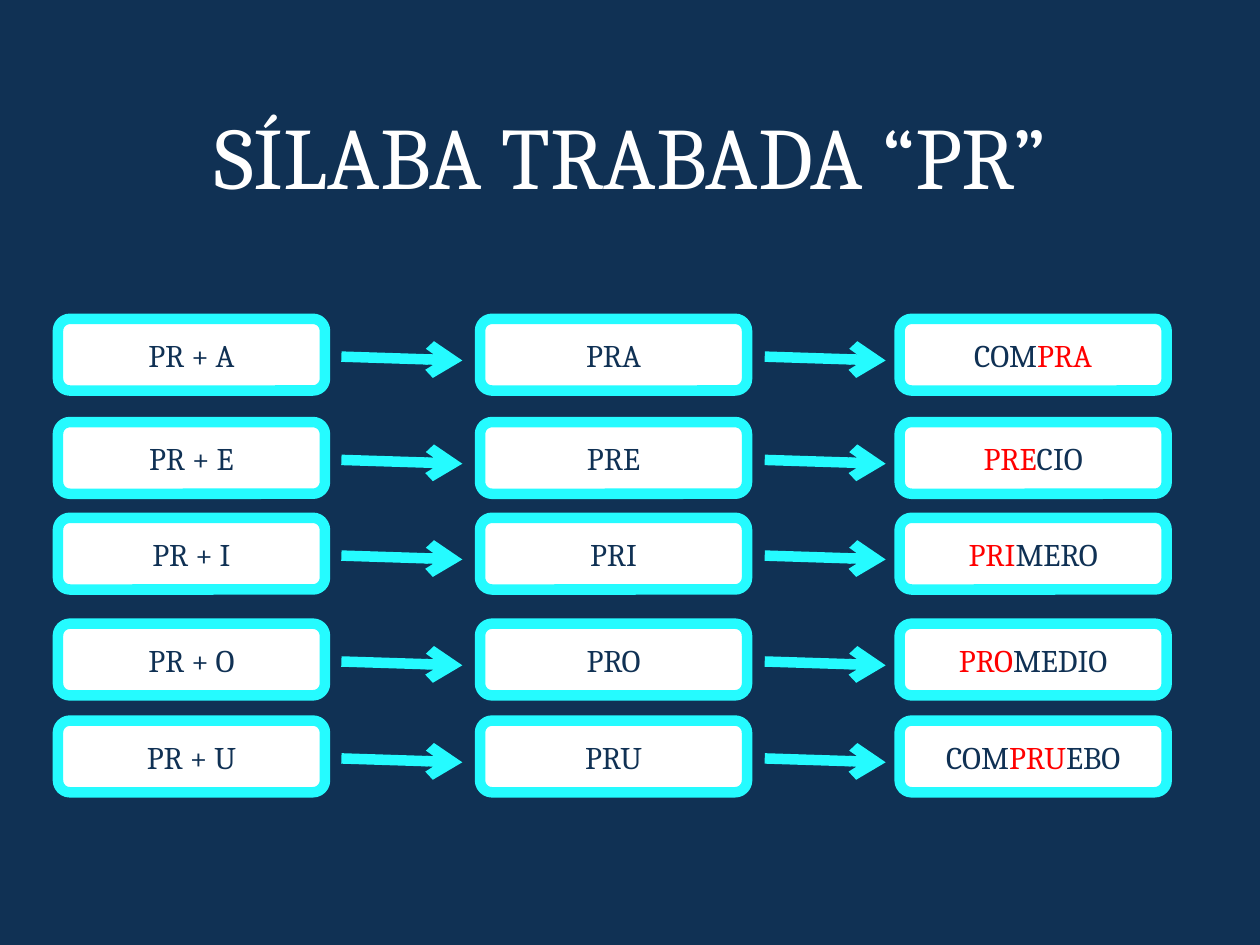
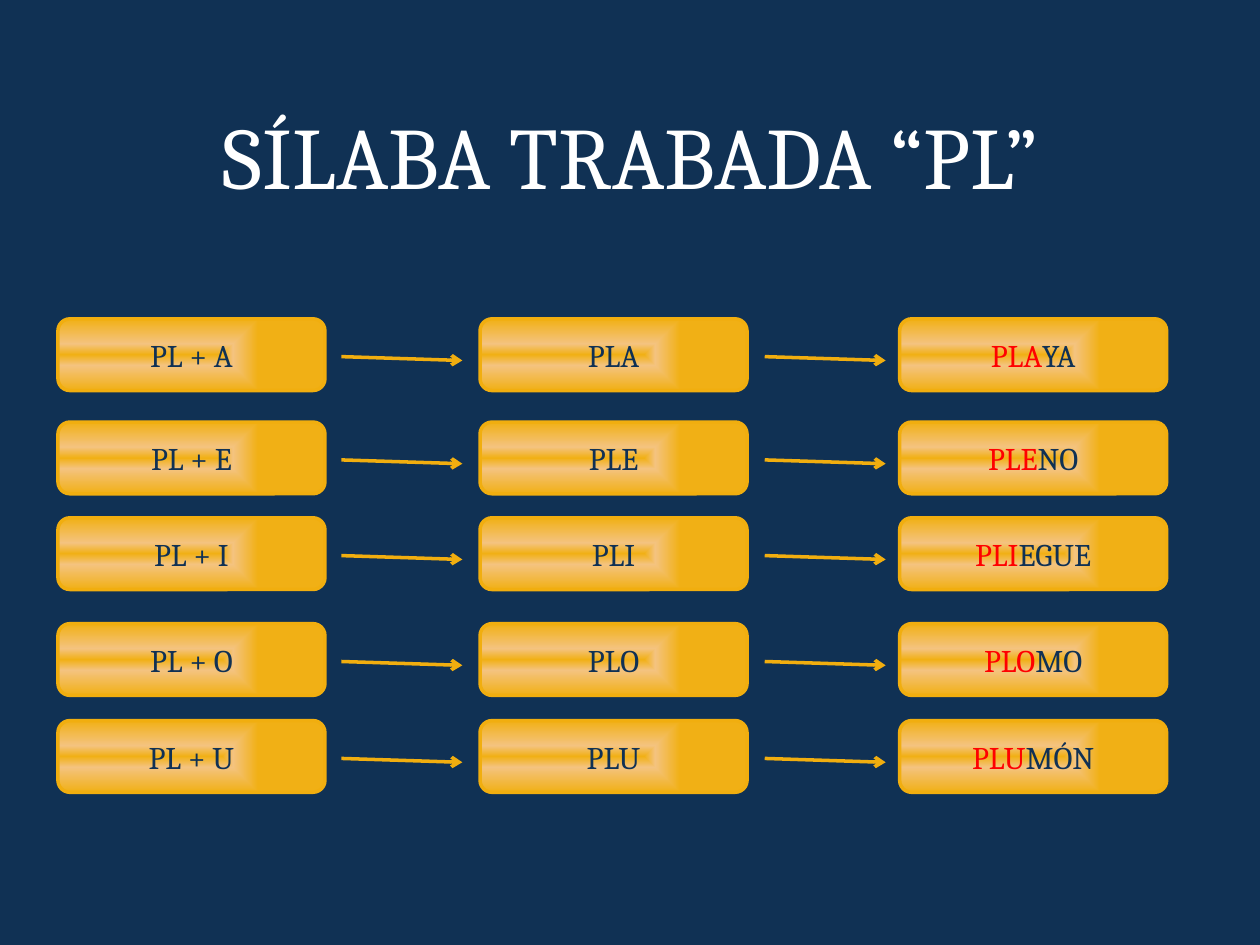
from dataclasses import dataclass

from lxml.etree import SubElement
from pptx import Presentation
from pptx.dml.color import RGBColor
from pptx.enum.shapes import MSO_CONNECTOR as Connector, MSO_SHAPE as Preset
from pptx.enum.text import MSO_ANCHOR as Anchor, PP_ALIGN as Align
from pptx.oxml.ns import qn
from pptx.util import Pt

FONT = "Cambria"
NAVY, WHITE, RED = "103154", "FFFFFF", "FF0000"

VOWELS = "AEIOU"
ROW_TOPS = (182.2, 241.2, 295.9, 356.4, 411.8)
COLUMN_LEFTS = (33.1, 274.3, 514.1)
BOX_WIDTH, BOX_HEIGHT = 152.6, 41
ARROW_LEFTS = (195.1, 437)
ARROW_LENGTH, ARROW_DROP = 69.1, 2.2
ARROW_OFFSET = 21.6


@dataclass(frozen=True)
class GradientStop:
    percent: int
    color: str


@dataclass(frozen=True)
class Lesson:
    consonants: str
    words: tuple[str, ...]
    accent: str
    line_width: float
    fill: str | tuple[GradientStop, ...]


GOLD_GLOW = (GradientStop(0, "F1B015"), GradientStop(30, "F4C37F"), GradientStop(100, "F1B015"))

LESSONS = (
    Lesson("PR", ("COMPRA", "PRECIO", "PRIMERO", "PROMEDIO", "COMPRUEBO"), "25FBFF", 6, WHITE),
    Lesson("PL", ("PLAYA", "PLENO", "PLIEGUE", "PLOMO", "PLUMÓN"), "F1AE0F", 2, GOLD_GLOW),
)


def rgb(color: str) -> RGBColor:
    return RGBColor.from_string(color)


def style_run(run, size: float, color: str) -> None:
    run.font.name = FONT
    run.font.size = Pt(size)
    run.font.color.rgb = rgb(color)


def style_line(line, lesson: Lesson) -> None:
    line.color.rgb = rgb(lesson.accent)
    line.width = Pt(lesson.line_width)


def fill_with_gradient(shape, stops: tuple[GradientStop, ...]) -> None:
    """Fill with a rectangular gradient centred a quarter of the way across."""
    gradient = SubElement(shape._element.spPr, qn("a:gradFill"), rotWithShape="1")
    stop_list = SubElement(gradient, qn("a:gsLst"))
    for stop in stops:
        entry = SubElement(stop_list, qn("a:gs"), pos=str(stop.percent * 1000))
        SubElement(entry, qn("a:srgbClr"), val=stop.color)
    shade = SubElement(gradient, qn("a:path"))
    shade.set("path", "rect")
    SubElement(shade, qn("a:fillToRect"), l="50000", r="100000")


def add_title(slide, title: str) -> None:
    frame = slide.shapes.add_textbox(Pt(39.6), Pt(7.2), Pt(641.5), Pt(114.5)).text_frame
    frame.word_wrap = True
    frame.vertical_anchor = Anchor.BOTTOM
    frame.text = title
    paragraph = frame.paragraphs[0]
    paragraph.alignment = Align.CENTER
    style_run(paragraph.runs[0], 50, WHITE)


def add_box(slide, lesson: Lesson, left: float, top: float, text: str, highlight: str = "") -> None:
    """Draw a rounded box whose highlighted part, if any, is red."""
    box = slide.shapes.add_shape(
        Preset.ROUNDED_RECTANGLE, Pt(left), Pt(top), Pt(BOX_WIDTH), Pt(BOX_HEIGHT))
    box.shadow.inherit = False
    if isinstance(lesson.fill, str):
        box.fill.solid()
        box.fill.fore_color.rgb = rgb(lesson.fill)
    else:
        fill_with_gradient(box, lesson.fill)
    style_line(box.line, lesson)

    frame = box.text_frame
    frame.word_wrap = True
    frame.vertical_anchor = Anchor.MIDDLE
    paragraph = frame.paragraphs[0]
    paragraph.alignment = Align.CENTER
    for part in text.partition(highlight) if highlight else (text,):
        if part:
            run = paragraph.add_run()
            run.text = part
            style_run(run, 18, RED if part == highlight else NAVY)


def add_arrow(slide, lesson: Lesson, left: float, top: float) -> None:
    arrow = slide.shapes.add_connector(
        Connector.STRAIGHT, Pt(left), Pt(top), Pt(left + ARROW_LENGTH), Pt(top + ARROW_DROP))
    style_line(arrow.line, lesson)
    SubElement(arrow.line._get_or_add_ln(), qn("a:tailEnd"), type="arrow")
    SubElement(arrow._element.spPr, qn("a:effectLst"))


def add_lesson(prs, lesson: Lesson) -> None:
    slide = prs.slides.add_slide(prs.slide_layouts[6])
    slide.background.fill.solid()
    slide.background.fill.fore_color.rgb = rgb(NAVY)
    add_title(slide, f"SÍLABA TRABADA “{lesson.consonants}”")

    sum_left, syllable_left, word_left = COLUMN_LEFTS
    for vowel, word, top in zip(VOWELS, lesson.words, ROW_TOPS):
        syllable = lesson.consonants + vowel
        add_box(slide, lesson, sum_left, top, f"{lesson.consonants} + {vowel}")
        add_box(slide, lesson, syllable_left, top, syllable)
        add_box(slide, lesson, word_left, top, word, highlight=syllable)
        for arrow_left in ARROW_LEFTS:
            add_arrow(slide, lesson, arrow_left, top + ARROW_OFFSET)


def main() -> None:
    prs = Presentation()
    prs.slide_width, prs.slide_height = Pt(720), Pt(540)
    for lesson in LESSONS:
        add_lesson(prs, lesson)
    prs.save("out.pptx")


if __name__ == "__main__":
    main()
